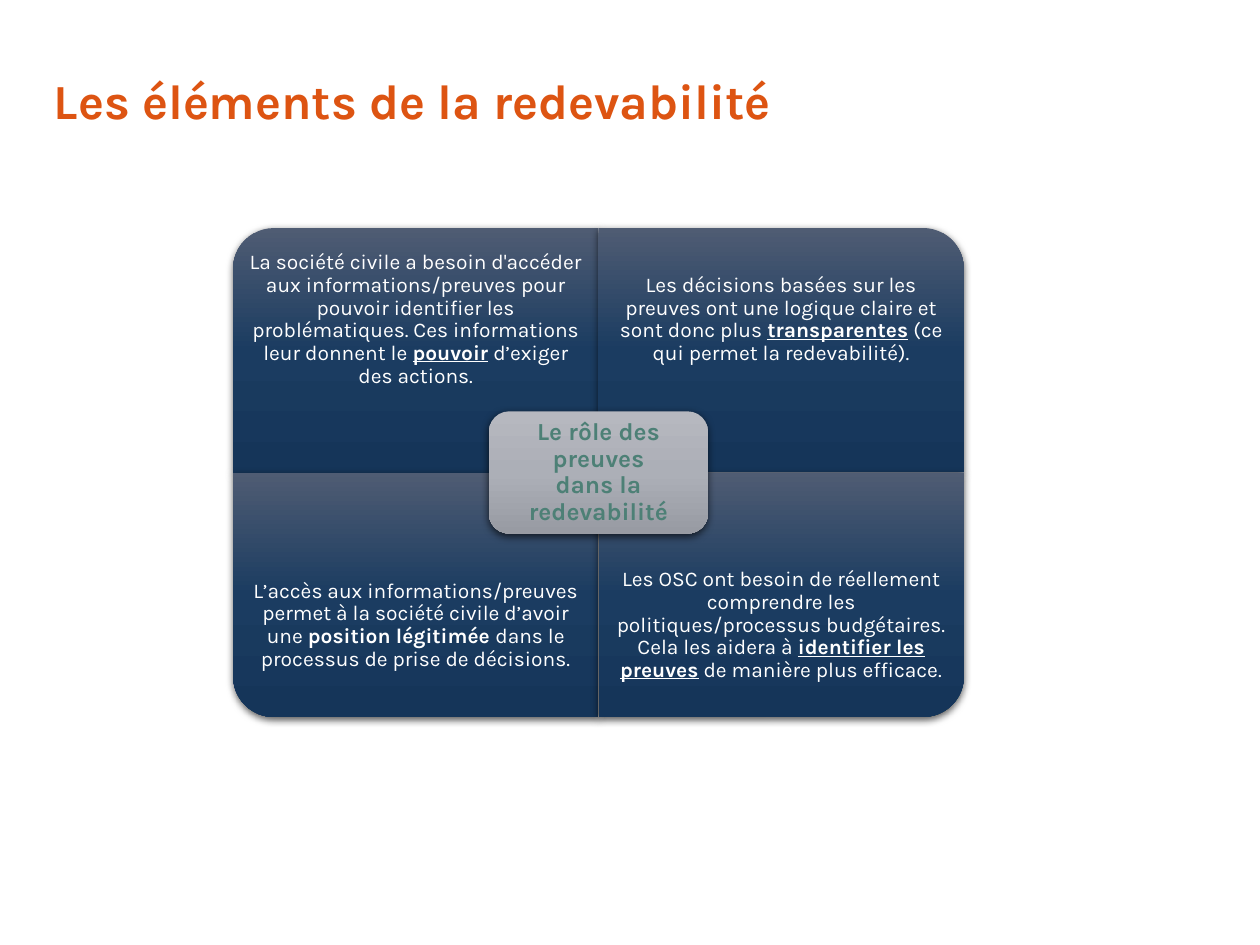
from dataclasses import dataclass

from lxml import etree
from pptx import Presentation
from pptx import util as u
from pptx.dml.color import RGBColor
from pptx.enum import shapes, text
from pptx.oxml import ns, parse_xml

Box = tuple[float, float, float, float]
Run = tuple[str, dict]


@dataclass(frozen=True)
class Theme:
    font: str = "Karla"
    title: str = "DD5412"
    body: str = "FFFFFF"
    hub: str = "4D8076"
    tile_stops: tuple = ("4F5C73", "1B3C61", "153559")
    hub_stops: tuple = ("B6B8BF", "ACAFB7", "989BA3")
    title_size: int = 28
    hub_size: int = 14
    body_size: int = 12


@dataclass(frozen=True)
class Tile:
    col: int
    row: int
    rotation: int
    runs: list[Run]


THEME = Theme()
LEFT, TOP, TILE_W, TILE_H = 1.85, 1.81, 2.9, 1.94
TEXT_H = 0.75 * TILE_H
HUB_W, HUB_H, HUB_PAD = 1.74, 0.97, 0.05
KEY = {"bold": True, "underline": True}

TILES = [
    Tile(0, 0, 270, [
        ("La société civile a besoin d'accéder aux informations/preuves pour pouvoir "
         "identifier les problématiques. Ces informations leur donnent le ", {}),
        ("pouvoir", KEY),
        (" d’exiger des actions.", {})]),
    Tile(1, 0, 0, [
        ("Les décisions basées sur les preuves ont une logique claire et sont donc plus ", {}),
        ("transparentes", KEY),
        (" (ce qui permet la redevabilité).", {})]),
    Tile(0, 1, 180, [
        ("L’accès aux informations/preuves permet à la société civile d’avoir une ", {}),
        ("position légitimée ", {"bold": True}),
        ("dans le processus de prise de décisions.", {})]),
    Tile(1, 1, 90, [
        ("Les OSC ont besoin de réellement comprendre les politiques/processus "
         "budgétaires. Cela les aidera à ", {}),
        ("identifier les preuves", KEY),
        (" de manière plus efficace.", {})]),
]


def add_panel(s, kind, box: Box, stops: tuple, rotation: int = 0) -> None:
    x, y, w, h = box
    if rotation % 180:
        x, y, w, h = x + (w - h) / 2, y + (h - w) / 2, h, w
    sp = s.shapes.add_shape(kind, *map(u.Inches, (x, y, w, h)))
    sp.rotation = rotation
    sp.line.fill.background()
    a = ns.nsdecls("a")
    gs = "".join(f'<a:gs pos="{i * 50000}"><a:srgbClr val="{c}"/></a:gs>'
                 for i, c in enumerate(stops))
    grad = parse_xml(f'<a:gradFill {a} rotWithShape="0"><a:gsLst>{gs}</a:gsLst>'
                     '<a:lin ang="5400000" scaled="0"/></a:gradFill>')
    sp.line._ln.addprevious(grad)
    sp.shadow.inherit = False
    effects = sp._element.spPr.find(ns.qn("a:effectLst"))
    shadow = etree.SubElement(effects, ns.qn("a:outerShdw"), blurRad=str(u.Pt(4.5)),
                              dist=str(u.Pt(1.5)), dir="5400000", rotWithShape="0")
    color = etree.SubElement(shadow, ns.qn("a:srgbClr"), val="000000")
    etree.SubElement(color, ns.qn("a:alpha"), val="63000")


def add_text(s, box: Box, lines: list[list[Run]], size: int, color: str,
             inset: tuple[float, float], align=text.PP_ALIGN.CENTER) -> None:
    tf = s.shapes.add_textbox(*map(u.Inches, box)).text_frame
    side, edge = map(u.Inches, inset)
    frame = {"word_wrap": True, "vertical_anchor": text.MSO_ANCHOR.MIDDLE,
             "margin_left": side, "margin_right": side,
             "margin_top": edge, "margin_bottom": edge}
    for name, value in frame.items():
        setattr(tf, name, value)
    p = tf.paragraphs[0]
    p.alignment, p.line_spacing = align, 0.9
    for i, runs in enumerate(lines):
        if i:
            p.add_line_break()
        for content, extra in runs:
            r = p.add_run()
            r.text = content
            fmt = {"name": THEME.font, "size": u.Pt(size), **extra}
            for name, value in fmt.items():
                setattr(r.font, name, value)
            r.font.color.rgb = RGBColor.from_string(color)


def add_tile(s, tile: Tile) -> None:
    x, y = LEFT + tile.col * TILE_W, TOP + tile.row * TILE_H
    add_panel(s, shapes.MSO_SHAPE.ROUND_1_RECTANGLE, (x, y, TILE_W, TILE_H),
              THEME.tile_stops, tile.rotation)
    text_y = y + tile.row * (TILE_H - TEXT_H)
    add_text(s, (x, text_y, TILE_W, TEXT_H), [tile.runs],
             THEME.body_size, THEME.body, (0.09, 0.09))


def add_hub(s) -> None:
    x, y = LEFT + TILE_W - HUB_W / 2, TOP + TILE_H - HUB_H / 2
    add_panel(s, shapes.MSO_SHAPE.ROUNDED_RECTANGLE, (x, y, HUB_W, HUB_H), THEME.hub_stops)
    bold = {"bold": True}
    add_text(s, (x + HUB_PAD, y + HUB_PAD, HUB_W - 2 * HUB_PAD, HUB_H - 2 * HUB_PAD),
             [[("Le rôle des preuves", bold)], [("dans la redevabilité", bold)]],
             THEME.hub_size, THEME.hub, (0.06, 0.06))


def main() -> None:
    prs = Presentation()
    prs.slide_width, prs.slide_height = u.Inches(10), u.Inches(7.5)
    s = prs.slides.add_slide(prs.slide_layouts[6])
    add_text(s, (0.33, 0.53, 9.35, 0.58),
             [[("Les éléments de la redevabilité", {"bold": True})]],
             THEME.title_size, THEME.title, (0.1, 0.05), text.PP_ALIGN.LEFT)
    for tile in TILES:
        add_tile(s, tile)
    add_hub(s)
    prs.save("out.pptx")


if __name__ == "__main__":
    main()
